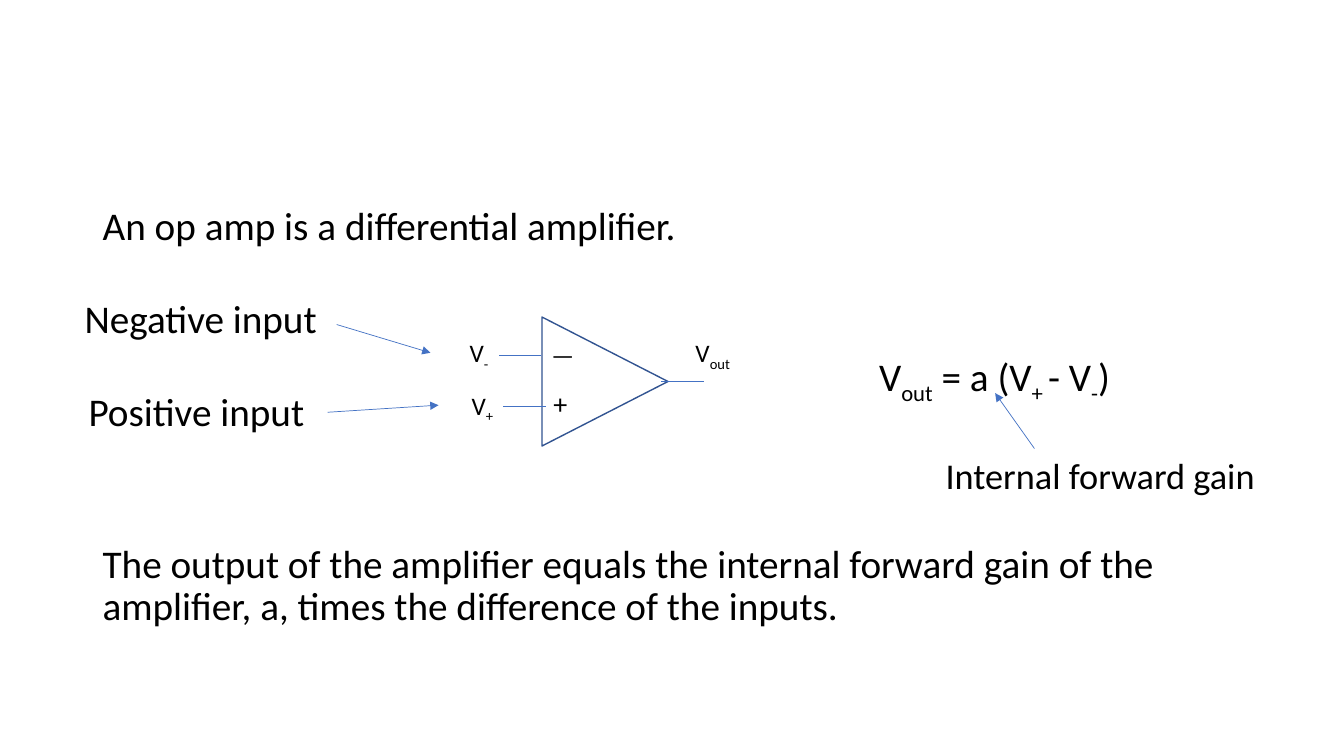
import pptx
import pptx.dml.color
import pptx.enum.shapes
import pptx.enum.text
import pptx.oxml
import pptx.oxml.ns
import pptx.util
from pptx.util import Inches

COLORS = {"text": "000000", "wire": "4472C4", "outline": "325491"}
FONT = "Calibri"


def color(name):
    return pptx.dml.color.RGBColor.from_string(COLORS[name])


class SlideBuilder:
    """Adds styled elements to the slide, or to the group opened last."""

    def __init__(self, slide):
        self.slide = slide
        self.shapes = slide.shapes

    def open_group(self):
        self.shapes = self.slide.shapes.add_group_shape().shapes

    def close_group(self):
        self.shapes = self.slide.shapes

    def text_box(self, left, top, width, height, parts, size):
        """Add one paragraph; every second part is a subscript."""
        box = self.shapes.add_textbox(
            Inches(left), Inches(top), Inches(width), Inches(height))
        box.text_frame.word_wrap = True
        paragraph = box.text_frame.paragraphs[0]
        for index, part in enumerate(parts):
            run = paragraph.add_run()
            run.text = part
            run.font.name = FONT
            run.font.size = pptx.util.Pt(size)
            run.font.color.rgb = color("text")
            if index % 2:
                run._r.get_or_add_rPr().set("baseline", "-25000")
        return box

    def body(self, left, top, width, height, *parts, size=28):
        box = self.text_box(left, top, width, height, parts, size)
        box.text_frame.paragraphs[0].line_spacing = 0.9

    def label(self, left, top, width, height, *parts, size=18):
        box = self.text_box(left, top, width, height, parts, size)
        box.text_frame.auto_size = pptx.enum.text.MSO_AUTO_SIZE.SHAPE_TO_FIT_TEXT

    def amplifier(self, left, top, width, height):
        triangle = self.shapes.add_shape(
            pptx.enum.shapes.MSO_SHAPE.ISOSCELES_TRIANGLE,
            Inches(left), Inches(top), Inches(width), Inches(height))
        triangle.rotation = 90
        triangle.shadow.inherit = False
        triangle.fill.background()
        triangle.line.color.rgb = color("outline")
        triangle.line.width = pptx.util.Pt(1)

    def line(self, start, end, arrow=False):
        connector = self.shapes.add_connector(
            pptx.enum.shapes.MSO_CONNECTOR.STRAIGHT,
            *(Inches(value) for value in (*start, *end)))
        connector.line.color.rgb = color("wire")
        connector.line.width = pptx.util.Pt(0.5)
        properties = connector._element.spPr
        if arrow:
            tail = pptx.oxml.parse_xml(
                f'<a:tailEnd {pptx.oxml.ns.nsdecls("a")} type="triangle"/>')
            properties.find(pptx.oxml.ns.qn("a:ln")).append(tail)
        properties.append(pptx.oxml.parse_xml(
            f'<a:effectLst {pptx.oxml.ns.nsdecls("a")}/>'))


def build_statements(builder):
    builder.body(0.92, 2, 11.5, 0.6, "An op amp is a differential amplifier.")
    builder.body(0.92, 5.35, 11.5, 1,
                 "The output of the amplifier equals the internal forward gain "
                 "of the amplifier, a, times the difference of the inputs.")


def build_op_amp(builder):
    builder.open_group()
    builder.amplifier(5.36, 3.16, 1.28, 1.25)
    builder.label(5.37, 3.32, 0.34, 0.4, "—")
    builder.label(5.39, 3.79, 0.34, 0.44, "+", size=20)
    for left, right, height in ((4.95, 5.37, 3.53), (4.99, 5.42, 4.03),
                                (6.56, 6.98, 3.78)):
        builder.line((left, height), (right, height))
    for left, top, subscript in ((4.56, 3.3, "-"), (4.58, 3.82, "+"),
                                 (6.8, 3.3, "out")):
        builder.label(left, top, 0.57, 0.4, "V", subscript)
    builder.close_group()


def build_annotations(builder):
    builder.body(8.62, 3.45, 3.28, 0.6,
                 "V", "out", " = a (V", "+ ", "- V", "-", ")")
    builder.body(0.74, 2.92, 3.28, 0.6, "Negative input")
    builder.body(0.78, 3.85, 3.28, 0.6, "Positive input")
    builder.body(9.28, 4.5, 3.28, 0.6, "Internal forward gain", size=25.9)
    for start, end in (((3.34, 3.22), (4.27, 3.5)),
                       ((3.25, 4.09), (4.35, 4.02)),
                       ((10.26, 4.45), (9.87, 3.9))):
        builder.line(start, end, arrow=True)


def main():
    presentation = pptx.Presentation()
    presentation.slide_width = Inches(13.33)
    presentation.slide_height = Inches(7.5)
    slide = presentation.slides.add_slide(presentation.slide_layouts[6])
    builder = SlideBuilder(slide)
    build_statements(builder)
    build_op_amp(builder)
    build_annotations(builder)
    presentation.save("out.pptx")


if __name__ == "__main__":
    main()
